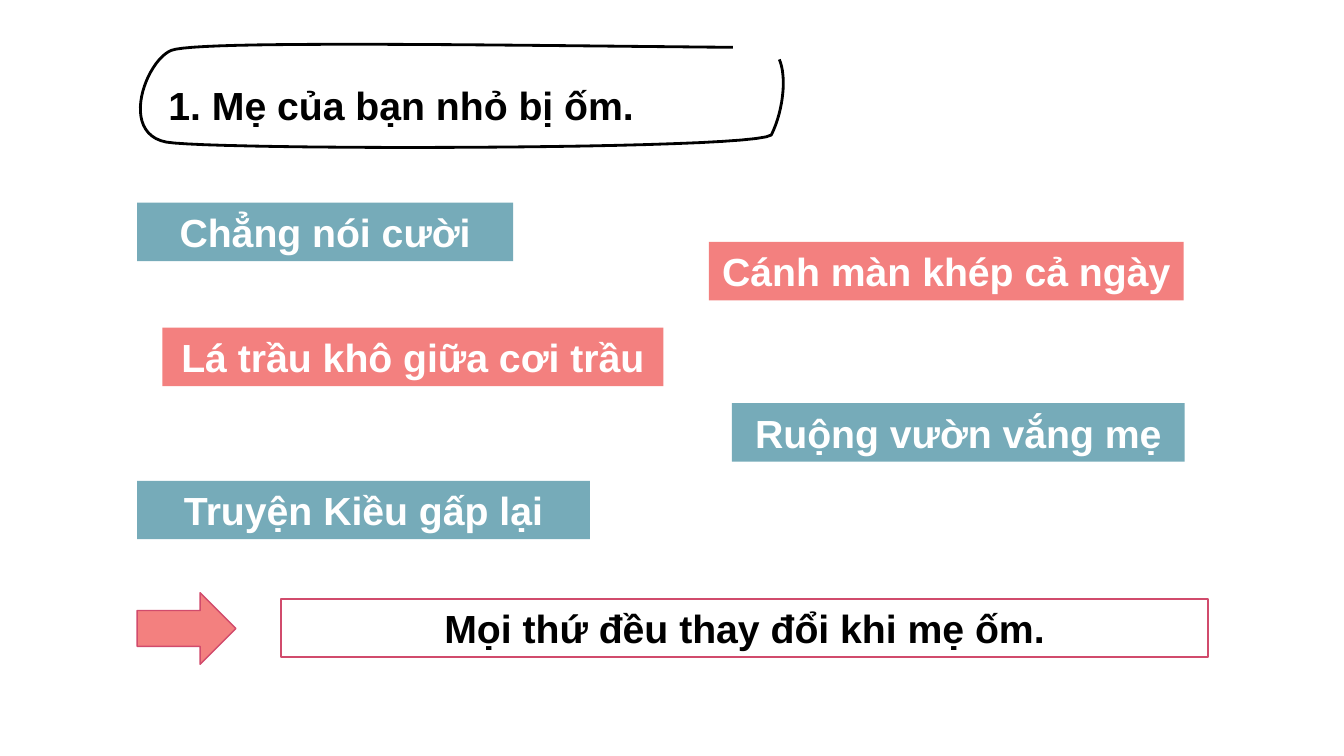
from pptx import Presentation
from pptx.dml.color import RGBColor
from pptx.enum.shapes import MSO_SHAPE
from pptx.enum.text import MSO_ANCHOR, MSO_AUTO_SIZE, PP_ALIGN
from pptx.util import Pt

EMU_PER_PX = 9144
LABEL_HEIGHT = 58
CURVE_STEPS = 24
COLORS = {
    "teal": "76ABB9",
    "coral": "F3807F",
    "rose": "D14B6C",
    "white": "FFFFFF",
    "black": "000000",
}
LABELS = [
    ("Chẳng nói cười", 136, 201, 373, "teal"),
    ("Lá trầu khô giữa cơi trầu", 161, 325, 497, "coral"),
    ("Truyện Kiều gấp lại", 136, 477, 449, "teal"),
    ("Cánh màn khép cả ngày", 703, 240, 471, "coral"),
    ("Ruộng vườn vắng mẹ", 726, 400, 449, "teal"),
]
OUTLINE_START = (727, 47)
OUTLINE_CURVES = [
    ((500, 45), (194, 40), (170, 50)),
    ((145, 60), (118, 132), (165, 141)),
    ((212, 149), (745, 149), (765, 134)),
    ((776, 112), (781, 78), (773, 59)),
]


def px(length):
    return round(length * EMU_PER_PX)


def color(name):
    return RGBColor.from_string(COLORS[name])


def set_line(shape, name, width):
    shape.line.color.rgb = color(name)
    shape.line.width = Pt(width)


def write(shape, text, text_color, alignment):
    frame = shape.text_frame
    frame.text = text
    frame.word_wrap = True
    frame.auto_size = MSO_AUTO_SIZE.NONE
    frame.vertical_anchor = MSO_ANCHOR.MIDDLE
    para = frame.paragraphs[0]
    para.alignment = alignment
    font = para.runs[0].font
    font.name = "Arial"
    font.size = Pt(28)
    font.bold = True
    font.color.rgb = color(text_color)


def add_block(page, kind, left, top, width, height, fill, line=None, line_width=1):
    block = page.shapes.add_shape(kind, px(left), px(top), px(width), px(height))
    block.shadow.inherit = False
    block.fill.solid()
    block.fill.fore_color.rgb = color(fill)
    if line:
        set_line(block, line, line_width)
    else:
        block.line.fill.background()
    return block


def curve_points(start, first, second, end):
    for step in range(1, CURVE_STEPS + 1):
        t = step / CURVE_STEPS
        u = 1 - t
        yield tuple(
            px(u**3 * a + 3 * u * u * t * b + 3 * u * t * t * c + t**3 * d)
            for a, b, c, d in zip(start, first, second, end)
        )


def add_title_outline(page):
    builder = page.shapes.build_freeform(*map(px, OUTLINE_START))
    start = OUTLINE_START
    for curve in OUTLINE_CURVES:
        builder.add_line_segments(curve_points(start, *curve), close=False)
        start = curve[-1]
    outline = builder.convert_to_shape()
    outline.shadow.inherit = False
    outline.fill.background()
    set_line(outline, "black", 2)


def place_title(page, text):
    title = page.shapes.title
    title.left, title.top, title.width, title.height = map(px, (157, 75, 672, 57))
    write(title, text, "black", PP_ALIGN.LEFT)


def main():
    deck = Presentation()
    deck.slide_width, deck.slide_height = px(1333), px(750)
    page = deck.slides.add_slide(deck.slide_layouts[5])

    place_title(page, "1. Mẹ của bạn nhỏ bị ốm.")
    add_title_outline(page)

    for text, left, top, width, fill in LABELS:
        label = add_block(page, MSO_SHAPE.RECTANGLE, left, top, width, LABEL_HEIGHT, fill)
        write(label, text, "white", PP_ALIGN.CENTER)

    add_block(page, MSO_SHAPE.RIGHT_ARROW, 136, 588, 98, 71, "coral", "rose")
    conclusion = add_block(
        page, MSO_SHAPE.RECTANGLE, 279, 594, 919, LABEL_HEIGHT, "white", "rose", 1.5
    )
    write(conclusion, "Mọi thứ đều thay đổi khi mẹ ốm.", "black", PP_ALIGN.CENTER)

    deck.save("out.pptx")


if __name__ == "__main__":
    main()
